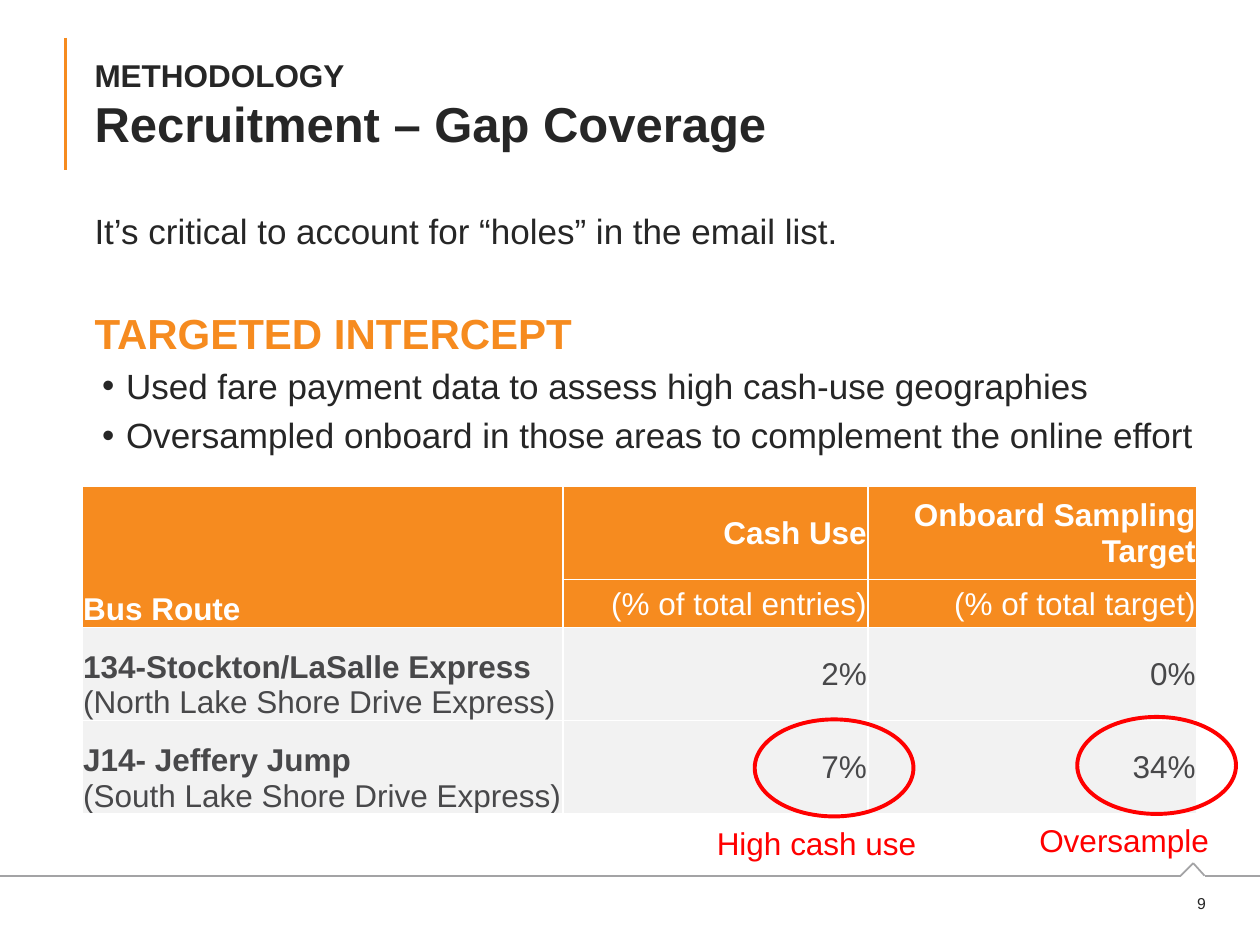
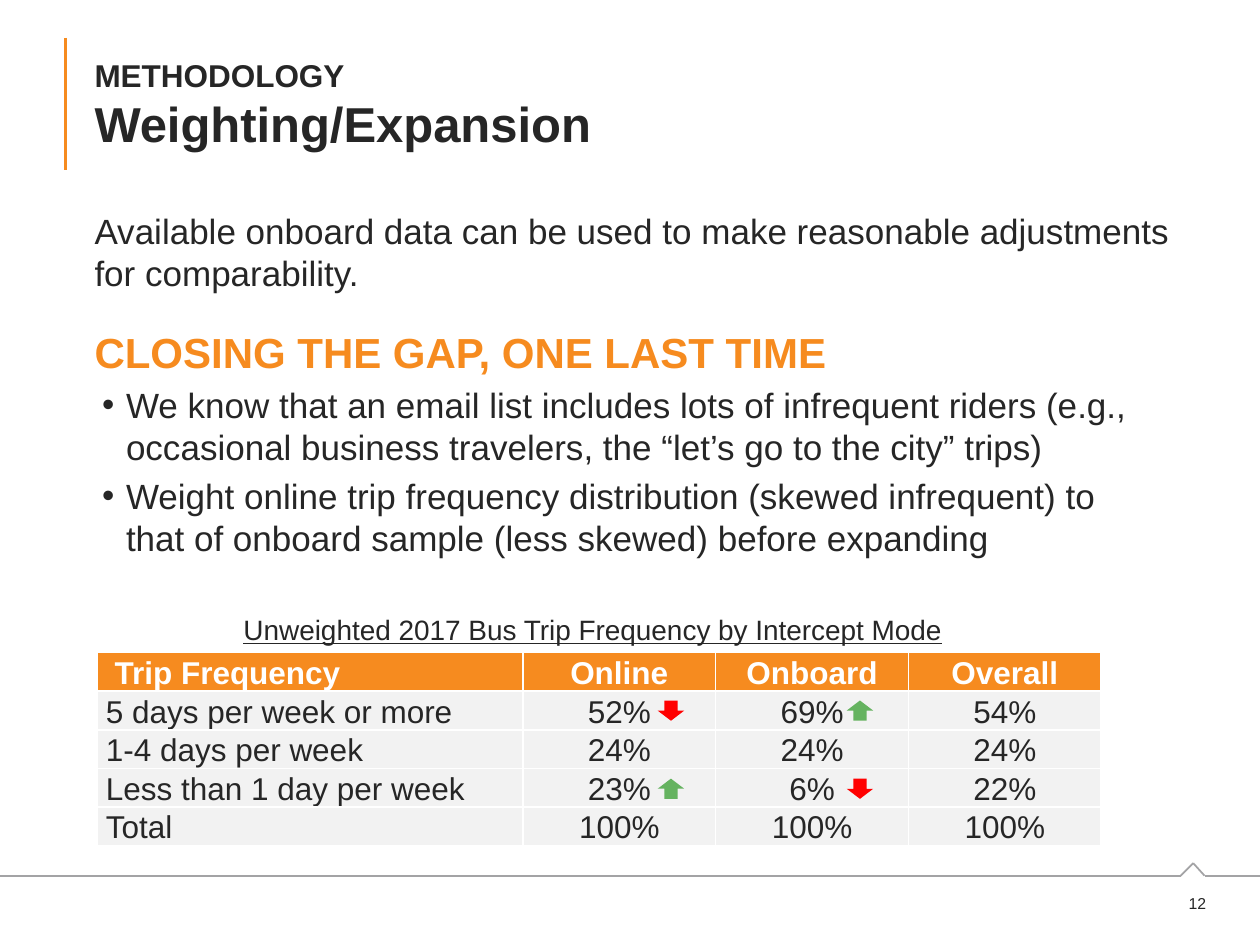
from lxml import etree
from pptx import Presentation
from pptx.dml.color import RGBColor
from pptx.enum.shapes import MSO_CONNECTOR, MSO_SHAPE
from pptx.enum.text import MSO_ANCHOR, MSO_AUTO_SIZE, PP_ALIGN
from pptx.oxml.ns import qn
from pptx.util import Inches, Pt

ORANGE = RGBColor(0xF6, 0x8B, 0x1F)
INK = RGBColor(0x26, 0x26, 0x26)
SLATE = RGBColor(0x48, 0x48, 0x4A)
GRAY = RGBColor(0xA3, 0xA3, 0xA5)
PALE = RGBColor(0xF2, 0xF2, 0xF2)
WHITE = RGBColor(0xFF, 0xFF, 0xFF)
RED = RGBColor(0xFF, 0x00, 0x00)
GREEN = RGBColor(0x65, 0xB3, 0x60)
LEFT, CENTER, RIGHT = PP_ALIGN.LEFT, PP_ALIGN.CENTER, PP_ALIGN.RIGHT
MIDDLE, BOTTOM = MSO_ANCHOR.MIDDLE, MSO_ANCHOR.BOTTOM
STRAIGHT = MSO_CONNECTOR.STRAIGHT
OVAL, UP_ARROW = MSO_SHAPE.OVAL, MSO_SHAPE.UP_ARROW
NO_FIT, GROW = MSO_AUTO_SIZE.NONE, MSO_AUTO_SIZE.SHAPE_TO_FIT_TEXT
FONT = "Arial"
TWO_CONTENT = 3
CELL = Inches(0.1)


def grid(*cells):
    return [int(cell * CELL) for cell in cells]


def write(frame, text, size=18, color=INK, bold=False, underline=False,
          align=LEFT, first=True, bullet=None, before=0, after=0, spacing=None):
    para = frame.paragraphs[0] if first else frame.add_paragraph()
    properties = para._p.get_or_add_pPr()
    if bullet:
        para.level = 1
        properties.set("marL", str(Inches(0.25)))
        properties.set("indent", str(Inches(-0.19)))
        etree.SubElement(properties, qn("a:buChar")).set("char", bullet)
    else:
        properties.set("marL", "0")
        properties.set("indent", "0")
        etree.SubElement(properties, qn("a:buNone"))
    para.alignment = align
    para.space_before, para.space_after = Pt(before), Pt(after)
    if spacing:
        para.line_spacing = Pt(spacing)
    span = para.add_run()
    span.text = text
    span.font.name, span.font.size = FONT, Pt(size)
    span.font.bold, span.font.underline = bold, underline
    span.font.color.rgb = color


pages = [
    {
        "number": "9",
        "title": "Recruitment – Gap Coverage",
        "intro": "It’s critical to account for “holes” in the email list.",
        "heading": "TARGETED INTERCEPT",
        "list_place": (6.5, 23.9, 90.7, 32.9),
        "points": [
            "Used fare payment data to assess high cash-use geographies",
            "Oversampled onboard in those areas to complement the online effort",
        ],
        "table_place": (6.5, 38.6, 88.5, 26),
        "columns": (38.2, 24.2, 26.1),
        "rows": (7.4, 3.8, 7.4, 7.4),
        "header_rows": 2,
        "cells": [
            ("Bus Route", "Cash Use", "Onboard Sampling Target"),
            ("", "(% of total entries)", "(% of total target)"),
            ("134-Stockton/LaSalle Express\n(North Lake Shore Drive Express)", "2%", "0%"),
            ("J14- Jeffery Jump\n(South Lake Shore Drive Express)", "7%", "34%"),
        ],
        "bold_routes": True,
        "ink": SLATE,
        "align": RIGHT,
        "anchor": MIDDLE,
        "margins": (0.1, 0.1, 0.1, 0),
        "spacing": None,
    },
    {
        "number": "12",
        "title": "Weighting/Expansion",
        "intro": "Available onboard data can be used to make reasonable "
                 "adjustments for comparability.",
        "heading": "CLOSING THE GAP, ONE LAST TIME",
        "list_place": (6.5, 25.4, 85.8, 32.9),
        "points": [
            "We know that an email list includes lots of infrequent riders (e.g., "
            "occasional business travelers, the “let’s go to the city” trips)",
            "Weight online trip frequency distribution (skewed infrequent) to that "
            "of onboard sample (less skewed) before expanding",
        ],
        "table_place": (7.7, 51.8, 79.7, 15.3),
        "columns": (33.8, 15.3, 15.3, 15.3),
        "rows": (3.06,) * 5,
        "header_rows": 1,
        "cells": [
            ("Trip Frequency", "Online", "Onboard", "Overall"),
            ("5 days per week or more", "52%", "69%", "54%"),
            ("1-4 days per week", "24%", "24%", "24%"),
            ("Less than 1 day per week", "23%", "6%", "22%"),
            ("Total", "100%", "100%", "100%"),
        ],
        "bold_routes": False,
        "ink": INK,
        "align": CENTER,
        "anchor": BOTTOM,
        "margins": (0.7, 0, 0.7, 0),
        "spacing": 15,
    },
]

frame_lines = [
    ((5.2, 3, 5.2, 13.5), ORANGE, 1.5),
    ((93.7, 69.5, 0, 69.5), GRAY, 1),
    ((93.7, 69.5, 94.7, 68.5), GRAY, 1),
    ((94.7, 68.5, 95.6, 69.5), GRAY, 1),
    ((95.6, 69.5, 100, 69.5), GRAY, 1),
]

deck = Presentation()
deck.slide_width, deck.slide_height = grid(100, 75)
slides, tables = [], []

for page in pages:
    slide = deck.slides.add_slide(deck.slide_layouts[TWO_CONTENT])
    slides.append(slide)

    for ends, color, width in frame_lines:
        line = slide.shapes.add_connector(STRAIGHT, *grid(*ends))
        line.line.color.rgb, line.line.width = color, Pt(width)
        etree.SubElement(line._element.spPr, qn("a:effectLst"))

    number = slide.shapes.add_textbox(*grid(92.5, 70.4, 4.2, 2.5)).text_frame
    number.word_wrap, number.auto_size = False, GROW
    number.vertical_anchor = MIDDLE
    write(number, page["number"], size=9, align=RIGHT)

    title, intro, points = slide.placeholders
    places = [(6.5, 3, 88.5, 10.5), (6.5, 16.1, 88.5, 12.5), page["list_place"]]
    for box, place in zip((title, intro, points), places):
        box.left, box.top, box.width, box.height = grid(*place)
        box.text_frame.auto_size = NO_FIT
    title.text_frame.vertical_anchor = MIDDLE
    write(title.text_frame, "METHODOLOGY", bold=True)
    write(title.text_frame, page["title"], size=28, bold=True, first=False)
    write(intro.text_frame, page["intro"], size=20)
    write(points.text_frame, page["heading"], size=24, color=ORANGE, bold=True, after=2)
    for point in page["points"]:
        write(points.text_frame, point, size=20, first=False, bullet="•", before=2, after=2)

    table = slide.shapes.add_table(
        len(page["rows"]), len(page["columns"]), *grid(*page["table_place"])).table
    tables.append(table)
    table.first_row, table.horz_banding = page["header_rows"] == 1, False
    for column, width in zip(table.columns, grid(*page["columns"])):
        column.width = width
    for row, height in zip(table.rows, grid(*page["rows"])):
        row.height = height
    for row, texts in enumerate(page["cells"]):
        header = row < page["header_rows"]
        for column, text in enumerate(texts):
            cell = table.cell(row, column)
            cell.fill.solid()
            cell.fill.fore_color.rgb = ORANGE if header else PALE
            (cell.margin_left, cell.margin_top,
             cell.margin_right, cell.margin_bottom) = grid(*page["margins"])
            cell.vertical_anchor = page["anchor"] if column else BOTTOM
            for index, part in enumerate(text.split("\n") if text else []):
                route = page["bold_routes"] and column == 0 and index == 0
                write(cell.text_frame, part, color=WHITE if header else page["ink"],
                      bold=row == 0 or route, align=page["align"] if column else LEFT,
                      first=index == 0, spacing=page["spacing"])

coverage, weighting = slides
route_table, frequency_table = tables
route_table.cell(0, 0).merge(route_table.cell(1, 0))
frequency_table.cell(0, 0).margin_left = Inches(0.14)

for text, left, top in [("Oversample", 85.5, 56.9), ("High cash use", 59.9, 57.1)]:
    ring = coverage.shapes.add_shape(OVAL, *grid(left, top, 12.6, 7.7))
    ring.shadow.inherit = False
    ring.fill.background()
    ring.line.color.rgb, ring.line.width = RED, Pt(2.25)
    label = coverage.shapes.add_textbox(*grid(left - 4, top + 7.8, 18.5, 4)).text_frame
    label.word_wrap, label.auto_size = True, GROW
    write(label, text, color=RED)

for left, top, rising in [(67.2, 55.6, True), (52.2, 61.8, True),
                          (52.2, 55.6, False), (67.2, 61.8, False)]:
    arrow = weighting.shapes.add_shape(UP_ARROW, *grid(left, top, 2.1, 1.6))
    arrow.shadow.inherit = False
    arrow.rotation = 0 if rising else 180
    arrow.fill.solid()
    arrow.fill.fore_color.rgb = GREEN if rising else RED
    arrow.line.fill.background()

caption = weighting.shapes.add_textbox(*grid(6.7, 48.1, 80.7, 3.7)).text_frame
caption.word_wrap, caption.auto_size = True, GROW
write(caption, "Unweighted 2017 Bus Trip Frequency by Intercept Mode",
      size=16, underline=True, align=CENTER)

deck.save("out.pptx")
